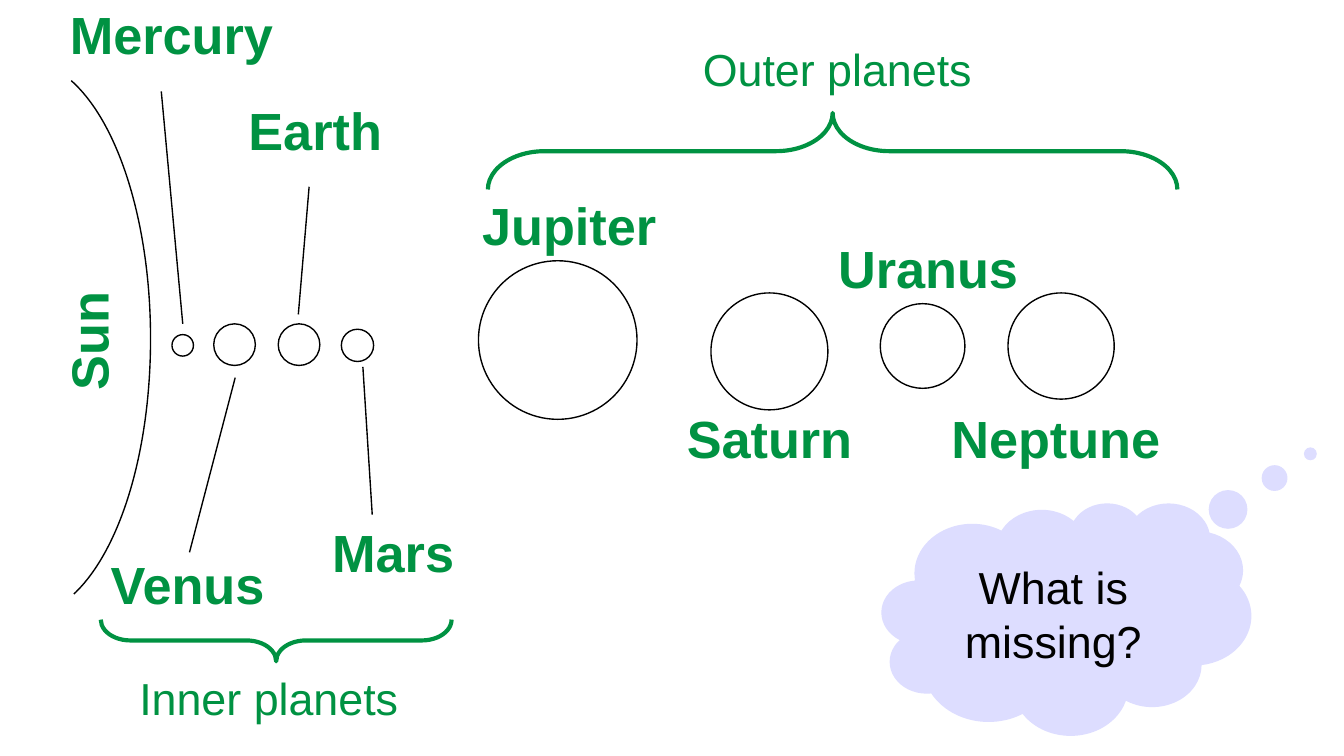
import pptx
import pptx.dml.color
import pptx.enum.shapes
import pptx.enum.text
import pptx.oxml
import pptx.oxml.ns
import pptx.util

Inches = pptx.util.Inches
Pt = pptx.util.Pt
SHAPE = pptx.enum.shapes.MSO_SHAPE
ANCHOR = pptx.enum.text.MSO_ANCHOR
GREEN = pptx.dml.color.RGBColor(0x00, 0x92, 0x42)
BLACK = pptx.dml.color.RGBColor(0x00, 0x00, 0x00)
LAVENDER = pptx.dml.color.RGBColor(0xDD, 0xDD, 0xFF)
FONT = "Arial"

# Content: the curve's points are a start, then two controls and an end per arc
SUN_EDGE = [(0.55, 4.42), (0.9, 4.09), (1.12, 3.35), (1.12, 2.52),
            (1.12, 1.68), (0.89, 0.92), (0.53, 0.6)]
NAME_SIZE = (1.81, 0.57)
GROUP_SIZE = (2.94, 0.5)
SUN_NAME = ("Sun", -0.25, 2.25)
# name, label left and top, circle left, top and diameter, leader line
PLANETS = [
    ("Mercury", (0.37, -0.03), (1.28, 2.49, 0.16), (1.2, 0.68, 1.36, 2.41)),
    ("Venus", (0.49, 4.06), (1.59, 2.41, 0.31), (1.75, 2.81, 1.41, 4.11)),
    ("Earth", (1.44, 0.68), (2.07, 2.41, 0.31), (2.22, 2.34, 2.3, 1.39)),
    ("Mars", (2.02, 3.82), (2.54, 2.45, 0.24), (2.7, 2.73, 2.77, 3.83)),
    ("Jupiter", (3.33, 1.39), (3.56, 1.94, 1.18), None),
    ("Saturn", (4.82, 2.97), (5.29, 2.18, 0.87), None),
    ("Uranus", (6, 1.71), (6.55, 2.26, 0.63), None),
    ("Neptune", (6.95, 2.97), (7.5, 2.18, 0.79), None),
]
# name, label left and top, brace box before turning, rotation, adjustments
GROUPS = [
    ("Inner planets", (0.53, 4.94), (1.9, 3.46, 0.31, 2.61), 270, (0.71, 0.5)),
    ("Outer planets", (4.76, 0.26), (5.91, -1.44, 0.57, 5.13), 90, (0.74, 0.5)),
]
QUESTION = "What is missing?"

# Slide in 16:9
prs = pptx.Presentation()
prs.slide_width = Inches(10)
prs.slide_height = Inches(10 * 9 / 16)
slide = prs.slides.add_slide(prs.slide_layouts[6])
shapes = slide.shapes


def set_outline(sp, color, width):
    sp.line.color.rgb = color
    sp.line.width = Pt(width)


def write(sp, text, size, color, bold=False):
    tf = sp.text_frame
    tf.word_wrap = True
    p = tf.paragraphs[0]
    p.alignment = pptx.enum.text.PP_ALIGN.CENTER
    r = p.add_run()
    r.text = text
    r.font.name = FONT
    r.font.size = Pt(size)
    r.font.bold = bold
    r.font.color.rgb = color


def add_label(text, left, top, box, size, bold=False):
    sp = shapes.add_textbox(*map(Inches, (left, top, *box)))
    write(sp, text, size, GREEN, bold)
    return sp


def add_preset(kind, *box):
    sp = shapes.add_shape(kind, *map(Inches, box))
    sp.shadow.inherit = False
    sp.fill.background()
    return sp


def add_leader(*ends):
    line = shapes.add_connector(pptx.enum.shapes.MSO_CONNECTOR.STRAIGHT,
                                *map(Inches, ends))
    set_outline(line, BLACK, 0.75)
    line._element.spPr.append(pptx.oxml.parse_xml(
        "<a:effectLst %s/>" % pptx.oxml.ns.nsdecls("a")))


def add_curve(points):
    points = [(Inches(x), Inches(y)) for x, y in points]
    builder = shapes.build_freeform(*points[0])
    builder.add_line_segments(points[1:], close=False)
    sp = builder.convert_to_shape()
    # Join each three straight segments into one Bezier segment
    segments = sp._element.xpath(".//a:lnTo")
    for i in range(0, len(segments), 3):
        curve = pptx.oxml.parse_xml(
            "<a:cubicBezTo %s/>" % pptx.oxml.ns.nsdecls("a"))
        segments[i].addprevious(curve)
        for segment in segments[i:i + 3]:
            curve.append(segment[0])
            segment.getparent().remove(segment)
    sp.shadow.inherit = False
    sp.fill.background()
    set_outline(sp, BLACK, 0.75)


# Sun
add_curve(SUN_EDGE)
add_label(*SUN_NAME, NAME_SIZE, 28, True).rotation = 270

# Planets
for name, label, (left, top, size), leader in PLANETS:
    sp = add_preset(SHAPE.OVAL, left, top, size, size)
    set_outline(sp, BLACK, 0.75)
    add_label(name, *label, NAME_SIZE, 28, True)
    if leader:
        add_leader(*leader)

# Thought bubble
cloud = add_preset(SHAPE.CLOUD_CALLOUT, 6.56, 3.74, 2.75, 1.73)
cloud.adjustments[0], cloud.adjustments[1] = 0.66, -0.71
cloud.fill.solid()
cloud.fill.fore_color.rgb = LAVENDER
cloud.line.fill.background()
cloud.text_frame.vertical_anchor = ANCHOR.MIDDLE
write(cloud, QUESTION, 24, BLACK)

# Planet groups
for name, label, box, rotation, adjustments in GROUPS:
    brace = add_preset(SHAPE.LEFT_BRACE, *box)
    brace.rotation = rotation
    for i, value in enumerate(adjustments):
        brace.adjustments[i] = value
    set_outline(brace, GREEN, 2.25)
    add_label(name, *label, GROUP_SIZE, 24)

prs.save("out.pptx")
